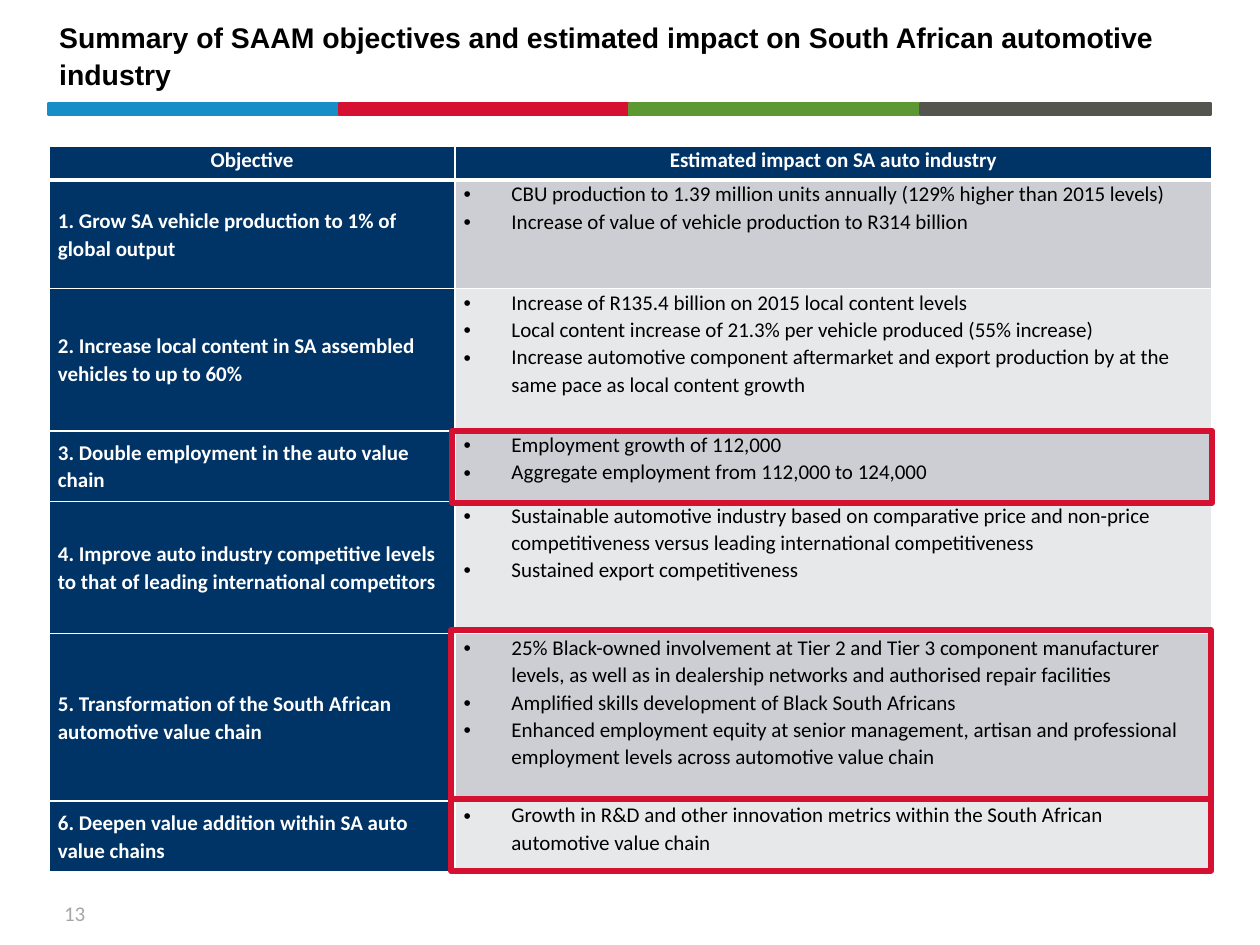
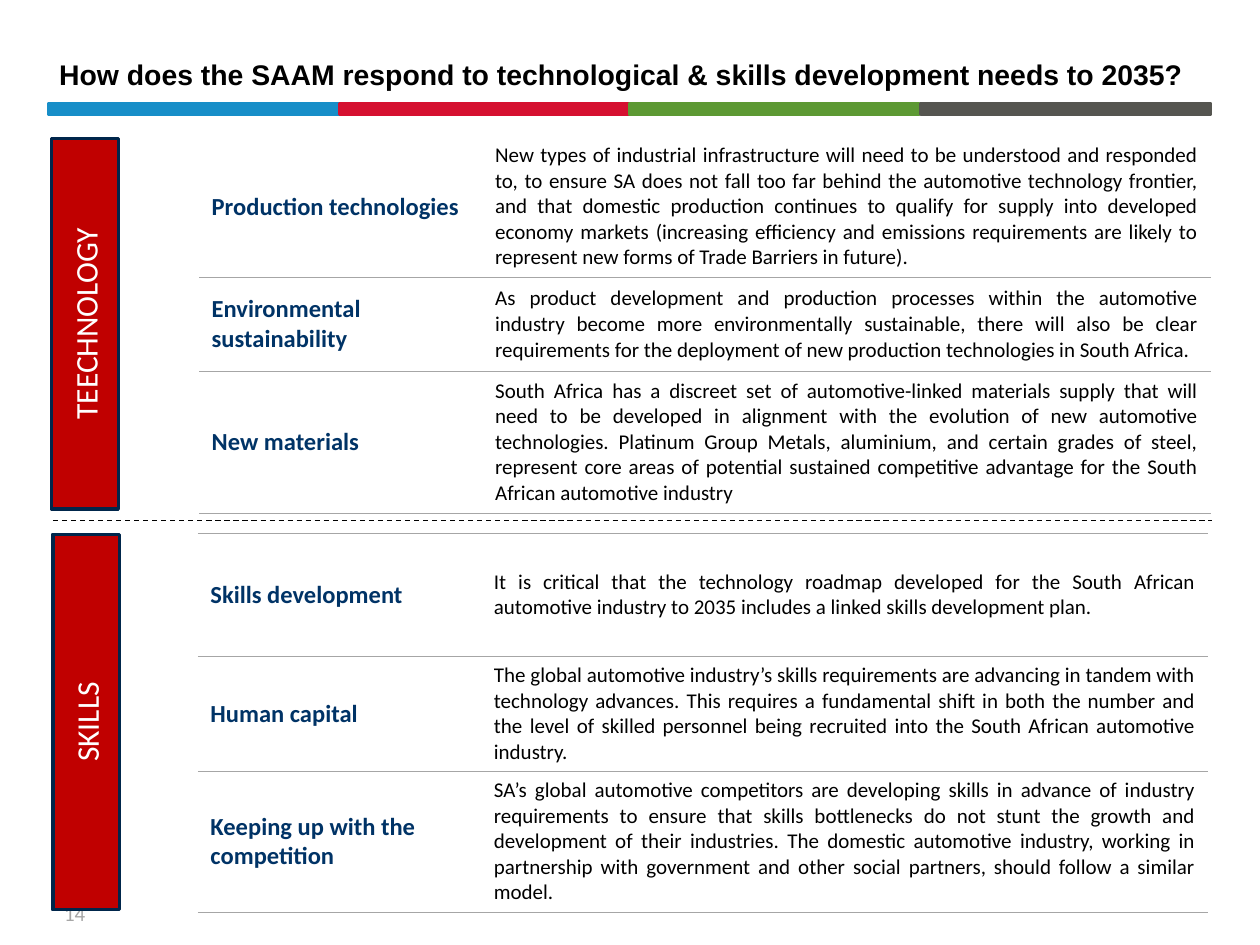
import pptx
import pptx.util
import pptx.dml.color
import pptx.enum.dml
import pptx.enum.shapes
import pptx.enum.text
import pptx.oxml
import pptx.oxml.ns
from lxml import etree

Inches = pptx.util.Inches
Pt = pptx.util.Pt
ALIGN = pptx.enum.text.PP_ALIGN
ANCHOR = pptx.enum.text.MSO_ANCHOR
RECTANGLE = pptx.enum.shapes.MSO_SHAPE.RECTANGLE

COLOURS = {
    "blue": "178EC8", "red": "D51030", "green": "5D9933", "charcoal": "555550",
    "navy": "003366", "dark navy": "00264B", "crimson": "C00000",
    "dark row": "CCCED3", "light row": "E7E8EA",
    "black": "000000", "white": "FFFFFF", "grey": "A6A6A6",
}
PLAIN_TABLE = "{2D5ABB26-0587-4C30-8999-92F81FD0307C}"

# Text styles: font values plus a colour name
TITLE = {"name": "Arial", "size": Pt(16.2), "bold": True, "colour": "black"}
NUMBER = {"name": "Calibri", "size": Pt(12), "bold": False, "colour": "grey"}
BODY = {**NUMBER, "colour": "black"}
OBJECTIVE = {**BODY, "bold": True, "colour": "white"}
TOPIC = {**OBJECTIVE, "size": Pt(14), "colour": "navy"}
BAR = {**BODY, "size": Pt(18), "colour": "white"}

OBJECTIVES = [
    (0.86, "1. Grow SA vehicle production to 1% of global output", [
        "CBU production to 1.39 million units annually (129% higher than 2015 levels)",
        "Increase of value of vehicle production to R314 billion"]),
    (1.13, "2. Increase local content in SA assembled vehicles to up to 60%", [
        "Increase of R135.4 billion on 2015 local content levels",
        "Local content increase of 21.3% per vehicle produced (55% increase)",
        "Increase automotive component aftermarket and export production by at the "
        "same pace as local content growth"]),
    (0.56, "3. Double employment in the auto value chain", [
        "Employment growth of 112,000",
        "Aggregate employment from 112,000 to 124,000"]),
    (1.05, "4. Improve auto industry competitive levels to that of leading "
     "international competitors", [
         "Sustainable automotive industry based on comparative price and non-price "
         "competitiveness versus leading international competitiveness",
         "Sustained export competitiveness"]),
    (1.33, "5. Transformation of the South African automotive value chain", [
        "25% Black-owned involvement at Tier 2 and Tier 3 component manufacturer "
        "levels, as well as in dealership networks and authorised repair facilities",
        "Amplified skills development of Black South Africans",
        "Enhanced employment equity at senior management, artisan and professional "
        "employment levels across automotive value chain"]),
    (0.56, "6. Deepen value addition within SA auto value chains", [
        "Growth in R&D and other innovation metrics within the South African "
        "automotive value chain"]),
]

TECHNOLOGY = [
    (1.12, "Production technologies",
     "New types of industrial infrastructure will need to be understood and responded "
     "to, to ensure SA does not fall too far behind the automotive technology frontier, "
     "and that domestic production continues to qualify for supply into developed "
     "economy markets (increasing efficiency and emissions requirements are likely to "
     "represent new forms of Trade Barriers in future)."),
    (0.75, "Environmental sustainability",
     "As product development and production processes within the automotive industry "
     "become more environmentally sustainable, there will also be clear requirements "
     "for the deployment of new production technologies in South Africa."),
    (1.12, "New materials",
     "South Africa has a discreet set of automotive-linked materials supply that will "
     "need to be developed in alignment with the evolution of new automotive "
     "technologies. Platinum Group Metals, aluminium, and certain grades of steel, "
     "represent core areas of potential sustained competitive advantage for the South "
     "African automotive industry"),
]

SKILLS = [
    (0.98, "Skills development",
     "It is critical that the technology roadmap developed for the South African "
     "automotive industry to 2035 includes a linked skills development plan."),
    (0.91, "Human capital",
     "The global automotive industry’s skills requirements are advancing in tandem with "
     "technology advances. This requires a fundamental shift in both the number and "
     "the level of skilled personnel being recruited into the South African automotive "
     "industry."),
    (1.12, "Keeping up with the competition",
     "SA’s global automotive competitors are developing skills in advance of industry "
     "requirements to ensure that skills bottlenecks do not stunt the growth and "
     "development of their industries. The domestic automotive industry, working in "
     "partnership with government and other social partners, should follow a similar "
     "model."),
]


def rgb(colour):
    return pptx.dml.color.RGBColor.from_string(COLOURS[colour])


def set_values(target, values):
    for name, value in values.items():
        setattr(target, name, value)


def place(shape, left, top, width, height):
    set_values(shape, {"left": Inches(left), "top": Inches(top),
                       "width": Inches(width), "height": Inches(height)})


def write(frame, lines, style, align=ALIGN.LEFT, spacing=1.0, bulleted=False):
    """Write one paragraph for each line."""
    for index, line in enumerate(lines):
        para = frame.paragraphs[0] if index == 0 else frame.add_paragraph()
        set_values(para, {"alignment": align, "line_spacing": spacing,
                          "space_before": Pt(0)})
        span = para.add_run()
        span.text = line
        set_values(span.font, {k: v for k, v in style.items() if k != "colour"})
        span.font.color.rgb = rgb(style["colour"])
        if bulleted:
            add_bullet(para)


def add_bullet(para):
    props = para._p.get_or_add_pPr()
    props.set("marL", str(Inches(0.38)))
    props.set("indent", str(Inches(-0.38)))
    etree.SubElement(props, pptx.oxml.ns.qn("a:buFont"), typeface="Arial")
    etree.SubElement(props, pptx.oxml.ns.qn("a:buChar"), char="•")


def add_box(page, left, top, width, height, fill=None, line=None, weight=1):
    box = page.shapes.add_shape(RECTANGLE, Inches(left), Inches(top),
                                Inches(width), Inches(height))
    box.shadow.inherit = False
    if fill:
        box.fill.solid()
        box.fill.fore_color.rgb = rgb(fill)
    else:
        box.fill.background()
    box.line.color.rgb = rgb(line)
    box.line.width = Pt(weight)
    return box


def add_page(deck, title, number):
    """Add a slide with the shared bands, title and page number."""
    page = deck.slides.add_slide(deck.slide_layouts[5])
    for index, colour in enumerate(("blue", "red", "green", "charcoal")):
        add_box(page, 0.39 + index * 2.305, 0.82, 2.3, 0.09, colour, colour, 2)

    heading = page.shapes.title
    place(heading, 0.37, 0.08, 9.25, 0.69)
    set_values(heading.text_frame, {"vertical_anchor": ANCHOR.BOTTOM, "word_wrap": True,
                                    "auto_size": pptx.enum.text.MSO_AUTO_SIZE.NONE})
    write(heading.text_frame, [title], TITLE, spacing=1.08)

    box = page.shapes.add_textbox(Inches(0.41), Inches(7.1), Inches(2.42), Inches(0.4))
    box.text_frame.word_wrap = True
    write(box.text_frame, [str(number)], NUMBER)
    return page


def add_plain_table(page, left, top, widths, heights):
    frame = page.shapes.add_table(len(heights), len(widths), Inches(left), Inches(top),
                                  Inches(sum(widths)), Inches(sum(heights)))
    table = frame.table
    set_values(table, {"first_row": False, "horz_banding": False})
    table._tbl.tblPr.find(pptx.oxml.ns.qn("a:tableStyleId")).text = PLAIN_TABLE
    for column, width in zip(table.columns, widths):
        column.width = Inches(width)
    for row, height in zip(table.rows, heights):
        row.height = Inches(height)
    return table


def set_borders(cell, colour, weights):
    """Draw cell borders; weights maps L, R, T and B, in that order, to points."""
    props = cell._tc.get_or_add_tcPr()
    for index, (side, weight) in enumerate(weights.items()):
        props.insert(index, pptx.oxml.parse_xml(
            f'<a:ln{side} {pptx.oxml.ns.nsdecls("a")} w="{Pt(weight)}"><a:solidFill>'
            f'<a:srgbClr val="{COLOURS[colour]}"/></a:solidFill></a:ln{side}>'))


def fill_cell(cell, lines, style, fill=None, anchor=ANCHOR.MIDDLE, **layout):
    cell.vertical_anchor = anchor
    if fill:
        cell.fill.solid()
        cell.fill.fore_color.rgb = rgb(fill)
    else:
        cell.fill.background()
    write(cell.text_frame, lines, style, **layout)


def add_objectives_table(page):
    heights = [0.27] + [height for height, _, _ in OBJECTIVES]
    table = add_plain_table(page, 0.39, 1.16, [3.22, 6.01], heights)
    for column, label in enumerate(("Objective", "Estimated impact on SA auto industry")):
        fill_cell(table.cell(0, column), [label], OBJECTIVE, "navy", ANCHOR.TOP,
                  align=ALIGN.CENTER, spacing=1.07)
    for row, (_, objective, impacts) in enumerate(OBJECTIVES, start=1):
        fill_cell(table.cell(row, 0), [objective], OBJECTIVE, "navy", spacing=1.07)
        fill_cell(table.cell(row, 1), impacts, BODY,
                  "dark row" if row % 2 else "light row", ANCHOR.TOP,
                  spacing=1.07, bulleted=True)
    for index, cell in enumerate(table.iter_cells()):
        set_values(cell, {"margin_left": Inches(0.07), "margin_right": Inches(0.07),
                          "margin_top": 0, "margin_bottom": 0})
        row = index // 2
        set_borders(cell, "white", {"L": 1, "R": 1, "T": 3 if row == 1 else 1,
                                    "B": 3 if row == 0 else 1})


def add_topics_table(page, left, top, widths, topics, top_line):
    table = add_plain_table(page, left, top, widths, [height for height, _, _ in topics])
    for row, (_, topic, response) in enumerate(topics):
        fill_cell(table.cell(row, 0), [topic], TOPIC)
        fill_cell(table.cell(row, 1), [response], BODY, align=ALIGN.JUSTIFY)
        sides = "TB" if row or top_line else "B"
        for cell in table.rows[row].cells:
            set_borders(cell, "grey", dict.fromkeys(sides, 0.25))


def add_side_bar(page, label, left, top, width, height):
    """Add a bar turned to read upwards; the lengths are those it shows."""
    shift = (height - width) / 2
    bar = add_box(page, left - shift, top + shift, height, width,
                  "crimson", "dark navy", 2)
    bar.rotation = 270
    bar.text_frame.vertical_anchor = ANCHOR.MIDDLE
    write(bar.text_frame, [label], BAR, ALIGN.CENTER)


def add_dashed_line(page, left, right, height):
    rule = page.shapes.add_connector(pptx.enum.shapes.MSO_CONNECTOR.STRAIGHT, Inches(left),
                                     Inches(height), Inches(right), Inches(height))
    rule.line.color.rgb = rgb("black")
    set_values(rule.line, {"width": Pt(0.75),
                           "dash_style": pptx.enum.dml.MSO_LINE.DASH})
    etree.SubElement(rule._element.spPr, pptx.oxml.ns.qn("a:effectLst"))


def main():
    deck = pptx.Presentation()
    set_values(deck, {"slide_width": Inches(10), "slide_height": Inches(7.5)})

    # Objectives, with the key impacts outlined
    page = add_page(deck, "Summary of SAAM objectives and estimated impact on "
                    "South African automotive industry", 13)
    add_objectives_table(page)
    for left, top, height in ((3.58, 6.34, 0.57), (3.59, 3.42, 0.57), (3.58, 5, 1.34)):
        add_box(page, left, top, 6.03, height, line="red", weight=3.5)

    # Technology above, skills below
    page = add_page(deck, "How does the SAAM respond to technological & skills "
                    "development needs to 2035?", 14)
    add_topics_table(page, 1.58, 1.08, [2.25, 5.78], TECHNOLOGY, top_line=False)
    add_topics_table(page, 1.57, 4.23, [2.25, 5.77], SKILLS, top_line=True)
    add_side_bar(page, "TEECHNOLOGY", 0.41, 1.1, 0.53, 2.94)
    add_side_bar(page, "SKILLS", 0.42, 4.24, 0.53, 2.98)
    add_dashed_line(page, 0.42, 9.62, 4.13)

    deck.save("out.pptx")


if __name__ == "__main__":
    main()
